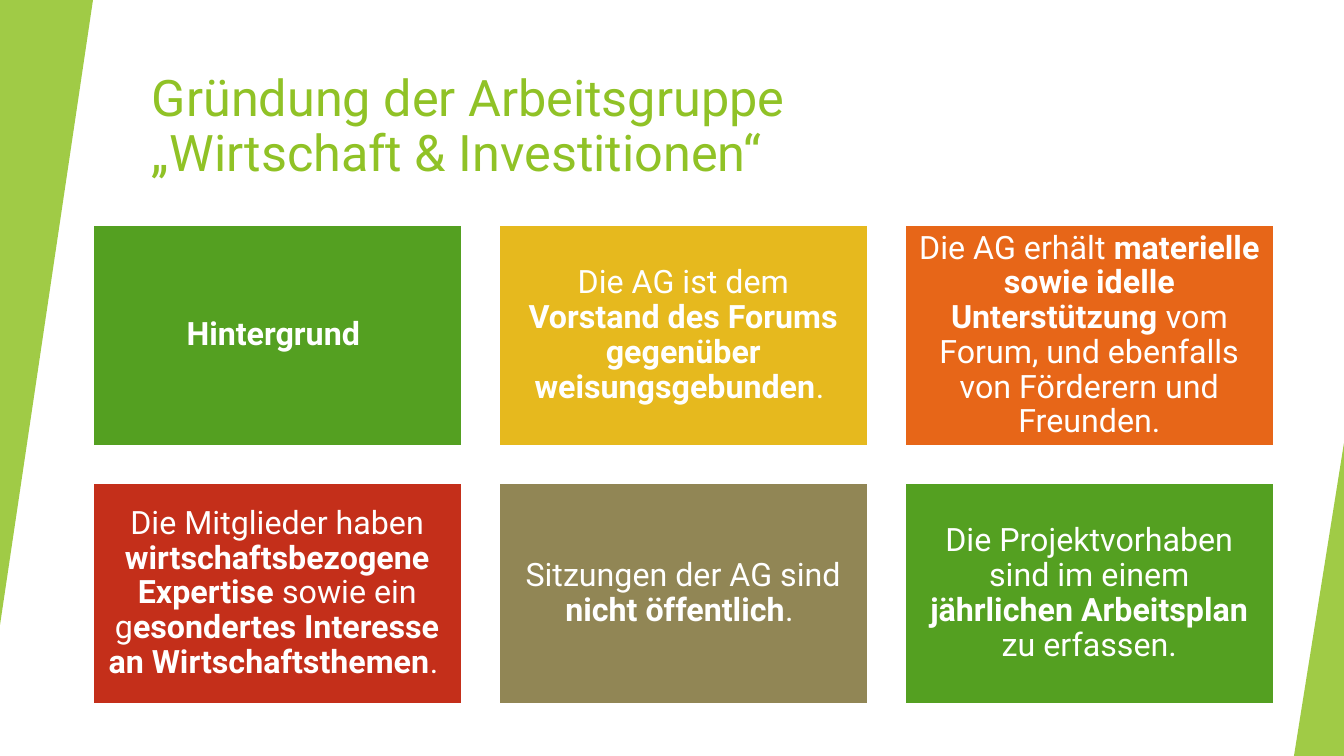
from pptx import Presentation
from pptx.dml.color import RGBColor
from pptx.enum.shapes import MSO_SHAPE as Shape
from pptx.enum.text import MSO_ANCHOR as Anchor, MSO_AUTO_SIZE as AutoSize, PP_ALIGN as Align
from pptx.oxml.ns import qn
from pptx.util import Pt
from lxml.etree import SubElement

PX = 12192000 / 1344
WHITE = RGBColor(0xFF, 0xFF, 0xFF)
LIME = RGBColor(0x90, 0xC2, 0x26)
GREEN = RGBColor(0x54, 0xA0, 0x21)
YELLOW = RGBColor(0xE6, 0xB9, 0x1E)
ORANGE = RGBColor(0xE7, 0x66, 0x18)
RED = RGBColor(0xC4, 0x2F, 0x1A)
KHAKI = RGBColor(0x91, 0x86, 0x55)


def px(*lengths):
    return [round(length * PX) for length in lengths]


def format_text(box, anchor, align, inset, font):
    frame = box.text_frame
    margins = dict.fromkeys(
        ("margin_left", "margin_top", "margin_right", "margin_bottom"), px(inset)[0])
    settings = {"word_wrap": True, "auto_size": AutoSize.NONE, "vertical_anchor": anchor}
    for name, value in {**settings, **margins}.items():
        setattr(frame, name, value)
    para = frame.paragraphs[0]
    para.alignment = align
    para.line_spacing = 0.9
    for span in para.runs:
        span.font.name = "Roboto"
        span.font.size = font["size"]
        span.font.color.rgb = font["color"]


deck = Presentation()
deck.slide_width, deck.slide_height = px(1344, 756)
page = deck.slides.add_slide(deck.slide_layouts[5])

title = page.shapes.title
title.left, title.top, title.width, title.height = px(142, 67, 1124, 121)
title.text_frame.text = "Gründung der Arbeitsgruppe \v„Wirtschaft & Investitionen“"
format_text(title, Anchor.MIDDLE, Align.LEFT, 10, {"size": Pt(36), "color": LIME})

for left, top, width, height, rotation in (
    (0, 0, 93, 625, 180),
    (1294, 443, 50, 313, 0),
):
    wedge = page.shapes.add_shape(Shape.ISOSCELES_TRIANGLE, *px(left, top, width, height))
    wedge.adjustments[0] = 1
    wedge.rotation = rotation
    wedge.shadow.inherit = False
    wedge.fill.solid()
    wedge.fill.fore_color.rgb = LIME
    wedge.line.fill.background()
    color = wedge.fill._xPr.find(qn("a:solidFill"))[0]
    SubElement(color, qn("a:alpha"), val="85000")

CARDS = [
    (GREEN, [("Hintergrund ", True)]),
    (YELLOW, [("Die AG ist dem ", False),
              ("Vorstand des Forums gegenüber weisungsgebunden", True),
              (". ", False)]),
    (ORANGE, [("Die AG erhält ", False),
              ("materielle sowie idelle Unterstützung ", True),
              ("vom Forum, und ebenfalls von Förderern und Freunden.", False)]),
    (RED, [("Die Mitglieder haben ", False),
           ("wirtschaftsbezogene Expertise ", True),
           ("sowie ein g", False),
           ("esondertes Interesse an Wirtschaftsthemen", True),
           (". ", False)]),
    (KHAKI, [("Sitzungen der AG sind ", False),
             ("nicht öffentlich", True),
             (". ", False)]),
    (GREEN, [("Die Projektvorhaben sind im einem ", False),
             ("jährlichen Arbeitsplan ", True),
             ("zu erfassen.", False)]),
]

for index, (fill, spans) in enumerate(CARDS):
    row, column = divmod(index, 3)
    card = page.shapes.add_shape(
        Shape.RECTANGLE, *px(93 + 406 * column, 225 + 258 * row, 369, 221))
    card.shadow.inherit = False
    card.fill.solid()
    card.fill.fore_color.rgb = fill
    card.line.color.rgb = WHITE
    card.line.width = Pt(1.5)
    for text, bold in spans:
        span = card.text_frame.paragraphs[0].add_run()
        span.text = text
        span.font.bold = bold
    format_text(card, Anchor.MIDDLE, Align.CENTER, 10, {"size": Pt(23), "color": WHITE})

deck.save("out.pptx")
